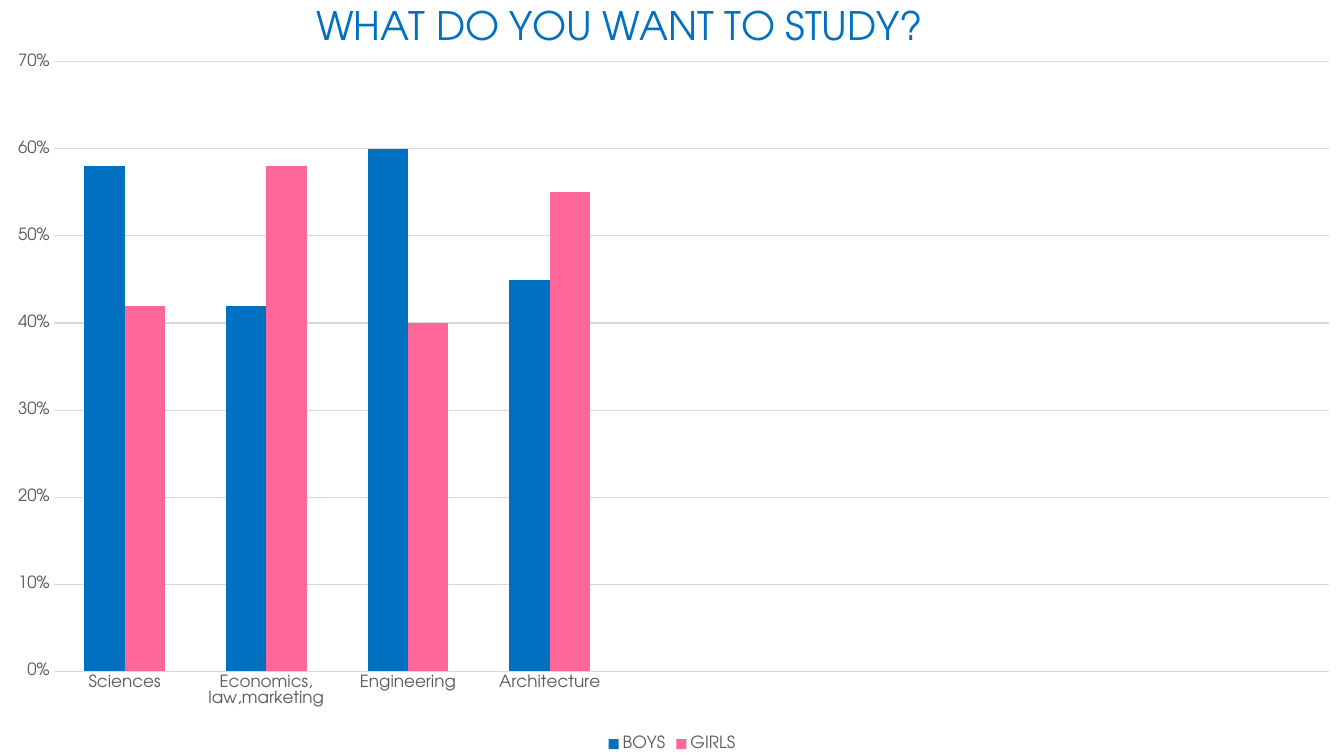
"""Build a slide with a column chart of study choices by boys and girls."""
from pptx import Presentation
from pptx.chart.data import CategoryChartData
from pptx.dml.color import RGBColor
from pptx.enum.chart import XL_CHART_TYPE, XL_LEGEND_POSITION, XL_TICK_MARK
from pptx.oxml import parse_xml
from pptx.oxml.ns import nsdecls, qn
from pptx.util import Inches, Pt

FONT = "TeX Gyre Adventor"
BLUE = RGBColor(0x00, 0x70, 0xC0)
PINK = RGBColor(0xFF, 0x66, 0x99)
GREY = RGBColor(0x59, 0x59, 0x59)
GRID = RGBColor(0xD9, 0xD9, 0xD9)
BLACK = RGBColor(0x00, 0x00, 0x00)
SUBJECTS = ["Sciences", "Economics, law,marketing", "Engineering", "Architecture"]
EMPTY_SLOTS = 5
SERIES = [
    ("BOYS", [0.58, 0.42, 0.6, 0.45], BLUE),
    ("GIRLS", [0.42, 0.58, 0.4, 0.55], PINK),
]


def set_font(font, size, color):
    font.name = FONT
    font.size = Pt(size)
    font.bold = False
    font.color.rgb = color


def set_layout(element, index, tags):
    for old_layout in element.findall(qn("c:layout")):
        element.remove(old_layout)
    body = "".join(f'<c:{tag} val="{value}"/>' for tag, value in tags)
    element.insert(index, parse_xml(
        f'<c:layout {nsdecls("c")}><c:manualLayout>{body}</c:manualLayout></c:layout>'))


presentation = Presentation()
presentation.slide_width = Inches(13.33)
presentation.slide_height = Inches(7.5)
slide = presentation.slides.add_slide(presentation.slide_layouts[6])

chart_data = CategoryChartData(number_format="0%")
chart_data.categories = SUBJECTS + [""] * EMPTY_SLOTS
for name, values, color in SERIES:
    chart_data.add_series(name, values + [None] * EMPTY_SLOTS)
chart = slide.shapes.add_chart(
    XL_CHART_TYPE.COLUMN_CLUSTERED, 0, 0,
    presentation.slide_width, presentation.slide_height, chart_data).chart
set_font(chart.font, 10, BLACK)

chart.has_title = True
title_run = chart.chart_title.text_frame.paragraphs[0].add_run()
title_run.text = "WHAT DO YOU WANT TO STUDY?"
set_font(title_run.font, 28, BLUE)
set_layout(chart.chart_title.element, 1, [
    ("xMode", "edge"), ("yMode", "edge"), ("x", 0.23), ("y", 0)])

plot_area = chart.element.find(".//" + qn("c:plotArea"))
set_layout(plot_area, 0, [
    ("layoutTarget", "inner"), ("xMode", "edge"), ("yMode", "edge"),
    ("x", 0.04), ("y", 0.082), ("w", 0.949), ("h", 0.806)])

plot = chart.plots[0]
plot.vary_by_categories = False
plot.gap_width = 151
plot.overlap = 0
for series, (name, values, color) in zip(plot.series, SERIES):
    series.invert_if_negative = False
    series.format.fill.solid()
    series.format.fill.fore_color.rgb = color

for axis in (chart.category_axis, chart.value_axis):
    axis.major_tick_mark = XL_TICK_MARK.NONE
    axis.minor_tick_mark = XL_TICK_MARK.NONE
    axis.format.line.fill.background()
    set_font(axis.tick_labels.font, 12, GREY)

value_axis = chart.value_axis
value_axis.minimum_scale = 0
value_axis.maximum_scale = 0.7
value_axis.major_unit = 0.1
value_axis.tick_labels.number_format = "0%"
value_axis.tick_labels.number_format_is_linked = False
value_axis.has_major_gridlines = True
value_axis.major_gridlines.format.line.color.rgb = GRID
value_axis.major_gridlines.format.line.width = Pt(0.75)

chart.has_legend = True
chart.legend.position = XL_LEGEND_POSITION.BOTTOM
chart.legend.include_in_layout = False
set_font(chart.legend.font, 12, GREY)

presentation.save("out.pptx")
